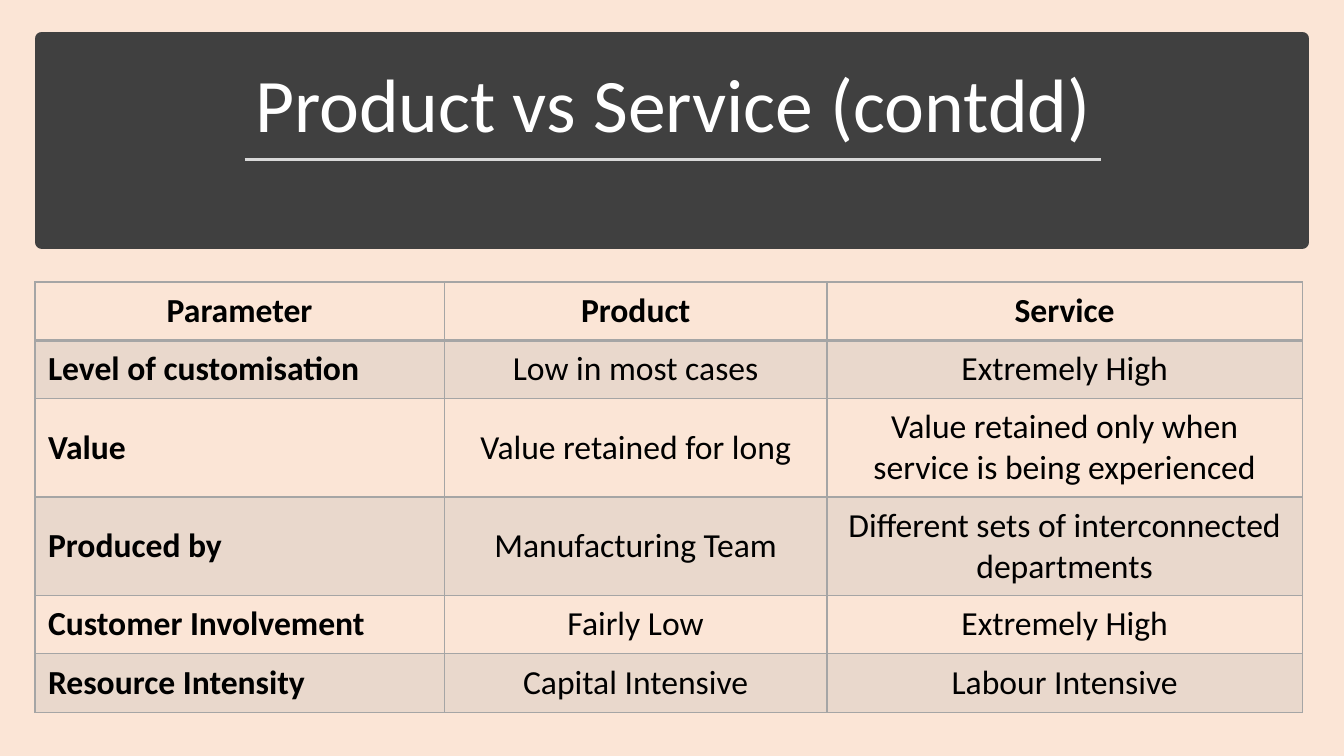
from lxml import etree
from pptx import Presentation
from pptx.dml.color import RGBColor
from pptx.enum.shapes import MSO_CONNECTOR, MSO_SHAPE
from pptx.enum.text import MSO_ANCHOR, PP_ALIGN
from pptx.oxml.ns import qn
from pptx.util import Inches, Pt

RECTANGLE, STRAIGHT = MSO_SHAPE.RECTANGLE, MSO_CONNECTOR.STRAIGHT
CENTER, LEFT = PP_ALIGN.CENTER, PP_ALIGN.LEFT
MIDDLE, BOTTOM = MSO_ANCHOR.MIDDLE, MSO_ANCHOR.BOTTOM

FONT = "Calibri"
PEACH, CHARCOAL, RULE_GREY, GRID_GREY = "FBE5D6", "404040", "D9D9D9", "A5A5A5"
BLACK, WHITE = "000000", "FFFFFF"
BAND_ALPHA = 20

COMPARISON = [
    ("Parameter", "Product", "Service"),
    ("Level of customisation", "Low in most cases", "Extremely High"),
    ("Value", "Value retained for long",
     "Value retained only when service is being experienced"),
    ("Produced by", "Manufacturing Team",
     "Different sets of interconnected departments"),
    ("Customer Involvement", "Fairly Low", "Extremely High"),
    ("Resource Intensity", "Capital Intensive", "Labour Intensive"),
]
COLUMN_SHARES = (0.323, 0.302, 0.375)
ROW_SHARES = (0.136, 0.136, 0.229, 0.229, 0.136, 0.136)


def color(hex_code):
    return RGBColor.from_string(hex_code)


def sub_box(box, left, top, width, height):
    """Area inside box, given as shares of its width and height."""
    x, y, w, h = box
    return (round(x + left * w), round(y + top * h),
            round(width * w), round(height * h))


def add_run(paragraph, words, size, hex_code, bold=False):
    run = paragraph.add_run()
    run.text = words
    run.font.name = FONT
    run.font.size = Pt(size)
    run.font.bold = bold
    run.font.color.rgb = color(hex_code)


def add_banner(slide, box):
    # Dark panel
    panel = slide.shapes.add_shape(RECTANGLE, *box)
    panel.shadow.inherit = False
    panel.fill.solid()
    panel.fill.fore_color.rgb = color(CHARCOAL)
    panel.line.color.rgb = color(CHARCOAL)
    panel.line.width = Pt(10)

    # Title
    title = slide.shapes.add_textbox(*sub_box(box, 0.014, 0.064, 0.974, 0.505))
    frame = title.text_frame
    frame.word_wrap = True
    frame.vertical_anchor = BOTTOM
    heading = frame.paragraphs[0]
    heading.alignment = CENTER
    heading.line_spacing = 0.9
    add_run(heading, "Product vs Service (contdd)", 54, WHITE)

    # Rule under the title
    x, y, width, _ = sub_box(box, 0.161, 0.594, 0.679, 0)
    rule = slide.shapes.add_connector(STRAIGHT, x, y, x + width, y)
    rule.line.color.rgb = color(RULE_GREY)
    rule.line.width = Pt(1.75)
    etree.SubElement(rule._element.spPr, qn("a:effectLst"))


def set_borders(cell, widths):
    properties = cell._tc.get_or_add_tcPr()
    for index, (side, width) in enumerate(widths.items()):
        border = etree.Element(qn(f"a:ln{side}"), w=str(Pt(width)))
        fill = etree.SubElement(border, qn("a:solidFill"))
        etree.SubElement(fill, qn("a:srgbClr"), val=GRID_GREY)
        properties.insert(index, border)


def fill_cell(cell, banded):
    if not banded:
        cell.fill.background()
        return
    cell.fill.solid()
    cell.fill.fore_color.rgb = color(GRID_GREY)
    tint = cell._tc.tcPr.find(".//" + qn("a:srgbClr"))
    etree.SubElement(tint, qn("a:alpha"), val=str(BAND_ALPHA * 1000))


def add_comparison(slide, box):
    table = slide.shapes.add_table(len(COMPARISON), len(COLUMN_SHARES), *box).table
    table.first_row = table.horz_banding = False
    for column, share in zip(table.columns, COLUMN_SHARES):
        column.width = round(box[2] * share)
    for row, share in zip(table.rows, ROW_SHARES):
        row.height = round(box[3] * share)

    for r, entries in enumerate(COMPARISON):
        for c, words in enumerate(entries):
            cell = table.cell(r, c)
            cell.vertical_anchor = MIDDLE
            cell.margin_left = cell.margin_right = Inches(0.13)
            cell.margin_top = cell.margin_bottom = Inches(0.07)
            fill_cell(cell, banded=r % 2 == 1)
            # A heavier line separates the header from the body
            set_borders(cell, {"L": 1, "R": 1, "T": 2 if r == 1 else 1,
                               "B": 2 if r == 0 else 1})
            paragraph = cell.text_frame.paragraphs[0]
            paragraph.alignment = LEFT if r > 0 and c == 0 else CENTER
            add_run(paragraph, words, 24, BLACK, bold=r == 0 or c == 0)


def main():
    deck = Presentation()
    deck.slide_width, deck.slide_height = Inches(13.33), Inches(7.5)
    page = (0, 0, deck.slide_width, deck.slide_height)
    slide = deck.slides.add_slide(deck.slide_layouts[6])
    slide.background.fill.solid()
    slide.background.fill.fore_color.rgb = color(PEACH)

    add_banner(slide, sub_box(page, 0.031, 0.051, 0.938, 0.269))
    add_comparison(slide, sub_box(page, 0.026, 0.373, 0.943, 0.568))
    deck.save("out.pptx")


if __name__ == "__main__":
    main()
